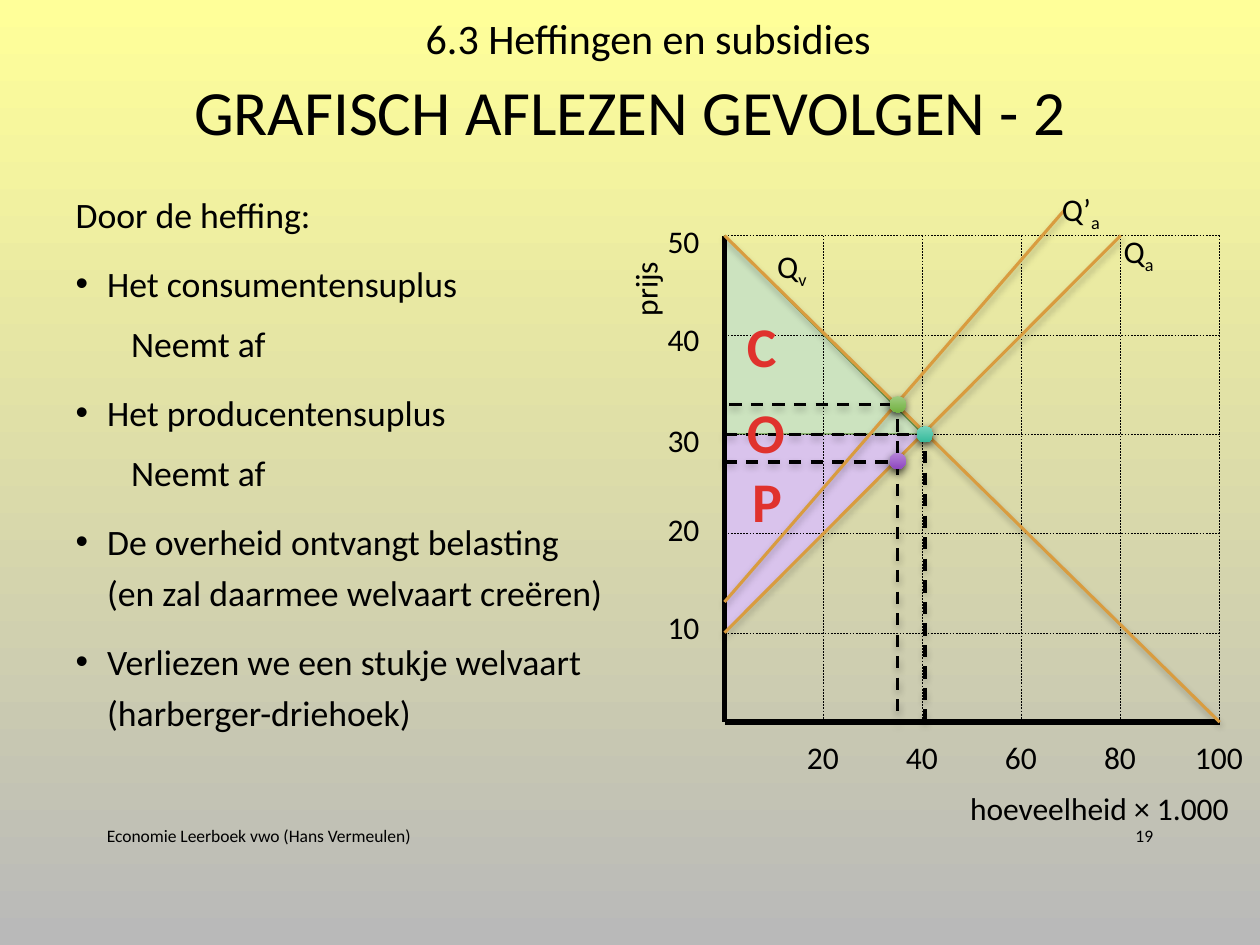
from lxml.etree import SubElement
from pptx import Presentation
from pptx.dml.color import RGBColor
from pptx.enum.dml import MSO_LINE
from pptx.enum.shapes import MSO_CONNECTOR, MSO_SHAPE
from pptx.enum.text import MSO_ANCHOR, MSO_AUTO_SIZE, PP_ALIGN
from pptx.oxml.ns import qn
from pptx.util import Inches, Pt

INK, CURVE, RED = "000000", "D99C3F", "E0322D"


def color(code):
    return RGBColor.from_string(code)


def blend(fill, top, base):
    """Vertical gradient from top to base."""
    fill.gradient()
    fill.gradient_angle = 270
    for stop, code in zip(fill.gradient_stops, (top, base)):
        stop.color.rgb = color(code)


def shade(shape, alpha=0, blur=4):
    """Shadow straight below; an alpha of 0 gives none."""
    effects = SubElement(shape._element.spPr, qn("a:effectLst"))
    if alpha:
        outer = SubElement(effects, qn("a:outerShdw"), blurRad=str(Pt(blur)),
                           dist=str(Pt(2)), dir="5400000", rotWithShape="0")
        tint = SubElement(outer, qn("a:srgbClr"), val=INK)
        SubElement(tint, qn("a:alpha"), val=str(alpha * 1000))


class Deck:
    """Slide on a grid of 100 columns by 75 rows, with a price graph on it."""
    face = "Calibri"
    left, top = 57.5, 18.7
    unit, step = 0.393, 0.788

    def __init__(self):
        self.show = Presentation()
        self.show.slide_width, self.show.slide_height = Inches(10), Inches(7.5)
        self.slide = self.show.slides.add_slide(self.show.slide_layouts[1])
        self.shapes = self.slide.shapes
        blend(self.slide.background.fill, "FFFF99", "B9B9B9")

    def grid(self, *cells):
        return [Inches(cell / 10) for cell in cells]

    def spot(self, amount, price):
        """Column and row of a point in the graph."""
        return (self.left + amount * self.unit,
                self.top + (50 - price) * self.step)

    def style(self, para, size, code=INK, bold=False):
        para.font.name, para.font.size = self.face, Pt(size)
        para.font.color.rgb, para.font.bold = color(code), bold

    def place(self, shape, *cells):
        shape.left, shape.top, shape.width, shape.height = self.grid(*cells)

    def title(self, text, *cells):
        box = self.shapes.title
        self.place(box, *cells)
        box.text_frame.auto_size = MSO_AUTO_SIZE.NONE
        box.text_frame.vertical_anchor = MSO_ANCHOR.MIDDLE
        para = box.text_frame.paragraphs[0]
        para.text, para.alignment, para.line_spacing = text, PP_ALIGN.CENTER, 0.9
        self.style(para, 36)

    def body(self, items, *cells):
        """Items are pairs of kind (lead, point or sub) and text."""
        box = self.slide.placeholders[1]
        self.place(box, *cells)
        frame = box.text_frame
        frame.auto_size = MSO_AUTO_SIZE.NONE
        looks = {"lead": (0, 0, 0, 0), "point": (0, 0.25, -0.25, 10),
                 "sub": (1, 0.44, 0, 5)}
        for pos, (kind, text) in enumerate(items):
            para = frame.add_paragraph() if pos else frame.paragraphs[0]
            level, margin, indent, gap = looks[kind]
            para.text, para.level = text, level
            para.line_spacing, para.space_before = 1.2, Pt(gap)
            props = para._p.get_or_add_pPr()
            props.set("marL", str(Inches(margin)))
            props.set("indent", str(Inches(indent)))
            if kind == "point":
                SubElement(props, qn("a:buFont"), typeface="Arial")
                SubElement(props, qn("a:buChar"), char="•")
            else:
                SubElement(props, qn("a:buNone"))
            self.style(para, 20.4)

    def text(self, text, *cells, size=18, code=INK, bold=False, sub="",
             wrap=False, turn=0, right=False, middle=False):
        box = self.shapes.add_textbox(*self.grid(*cells))
        box.rotation = turn
        frame = box.text_frame
        frame.word_wrap = wrap
        if middle:
            frame.vertical_anchor = MSO_ANCHOR.MIDDLE
        para = frame.paragraphs[0]
        para.text = text
        if right:
            para.alignment = PP_ALIGN.RIGHT
        if sub:
            run = para.add_run()
            run.text = sub
            run._r.get_or_add_rPr().set("baseline", "-25000")
        self.style(para, size, code, bold)

    def line(self, start, end, width, code=INK, dash=False, alpha=0):
        """Straight line between two points of the graph."""
        ends = self.grid(*self.spot(*start), *self.spot(*end))
        line = self.shapes.add_connector(MSO_CONNECTOR.STRAIGHT, *ends)
        line.line.width, line.line.color.rgb = Pt(width), color(code)
        if dash:
            line.line.dash_style = MSO_LINE.DASH
        shade(line, alpha)

    def wedge(self, price, fill, edge=None, turn=0):
        """Right triangle, 40 units wide and 20 high, down from a price."""
        col, row = self.spot(0, price)
        area = self.shapes.add_shape(MSO_SHAPE.RIGHT_TRIANGLE,
                                     *self.grid(col, row, 15.75, 15.75))
        area.rotation = turn
        area.fill.solid()
        area.fill.fore_color.rgb = color(fill)
        if edge:
            area.line.color.rgb, area.line.width = color(edge), Pt(0.75)
        else:
            area.line.fill.background()
        shade(area)

    def dot(self, amount, price, top, base):
        col, row = self.spot(amount, price)
        dot = self.shapes.add_shape(
            MSO_SHAPE.OVAL, *self.grid(col - 0.65, row - 0.65, 1.3, 1.3))
        blend(dot.fill, top, base)
        dot.line.fill.background()
        shade(dot, 69, 5)


def main():
    deck = Deck()
    deck.wedge(30, "D9C3EC", turn=90)
    deck.wedge(50, "CCE3BF", "6B9B46")
    deck.body([
        ("lead", "Door de heffing:"),
        ("point", "Het consumentensuplus"),
        ("sub", "Neemt af"),
        ("point", "Het producentensuplus"),
        ("sub", "Neemt af"),
        ("point", "De overheid ontvangt belasting (en zal daarmee welvaart creëren)"),
        ("point", "Verliezen we een stukje welvaart\v(harberger-driehoek)"),
    ], 5, 14.1, 44.2, 48)
    deck.text("Economie Leerboek vwo (Hans Vermeulen)", 7.5, 64.3, 54.7, 4,
              size=10, wrap=True, middle=True)
    deck.text("19", 86.2, 64.3, 6.3, 4, size=10, wrap=True, right=True, middle=True)
    deck.title("GRAFISCH AFLEZEN GEVOLGEN - 2", 5, 3.7, 90, 10.9)

    # Axes, gridlines and scales
    deck.line((0, 50), (0, 1), 3)
    deck.line((100, 1), (0, 1), 3)
    for price in range(50, 0, -10):
        deck.line((0, price), (100, price), 0.25, dash=True)
    for amount in range(20, 101, 20):
        deck.line((amount, 50), (amount, 1), 0.25, dash=True)
        wide = 5.9 if amount == 100 else 4.6
        deck.text(str(amount), deck.spot(amount, 0)[0] - wide / 2, 58.1, wide, 4)
    for price, row in zip(range(10, 51, 10), (47.8, 40, 32.9, 24.9, 17.1)):
        deck.text(str(price), 52, row, 4.6, 4)
    deck.text("hoeveelheid × 1.000", 76, 62.1, 22.8, 4)
    deck.text("prijs", 48, 20.9, 6.4, 4, turn=270)

    # Demand and supply
    for start, end in [((0, 50), (100, 1)), ((0, 10), (80, 50))]:
        deck.line(start, end, 1.75, CURVE, alpha=28)
    deck.text("Q", 60.7, 19.1, 4.5, 4, sub="v")
    deck.text("Q", 88.2, 17.9, 4.5, 4, sub="a")

    # Equilibrium before the levy
    for start, end in [((0, 30), (40, 30)), ((40.5, 28.3), (40.5, 1))]:
        deck.line(start, end, 1.75, dash=True, alpha=28)
    deck.dot(40.5, 30, "77D4BC", "36BA9C")
    for name, col, row, wide in [("C", 58.3, 24.2, 4.5), ("P", 58.7, 36.5, 4.5),
                                 ("O", 58.3, 31.1, 5.1)]:
        deck.text(name, col, row, wide, 6.4, size=32, code=RED, bold=True)

    # Outcome after the levy
    for start, end in [((1, 33), (34, 33)), ((35, 31.5), (35, 1)),
                       ((0, 27.2), (34.5, 27.2))]:
        deck.line(start, end, 1.75, dash=True, alpha=28)
    deck.line((0, 13.1), (68.7, 52.6), 1.75, CURVE, alpha=28)
    deck.text("Q’", 83.3, 14.6, 5.1, 4, sub="a")
    deck.dot(35, 33, "9ECC7E", "73B142")
    deck.dot(35, 27.3, "B685DA", "8F47BF")
    deck.text("6.3 Heffingen en subsidies", 32.8, 0.5, 37.8, 5, size=24, wrap=True)
    deck.show.save("out.pptx")


if __name__ == "__main__":
    main()
